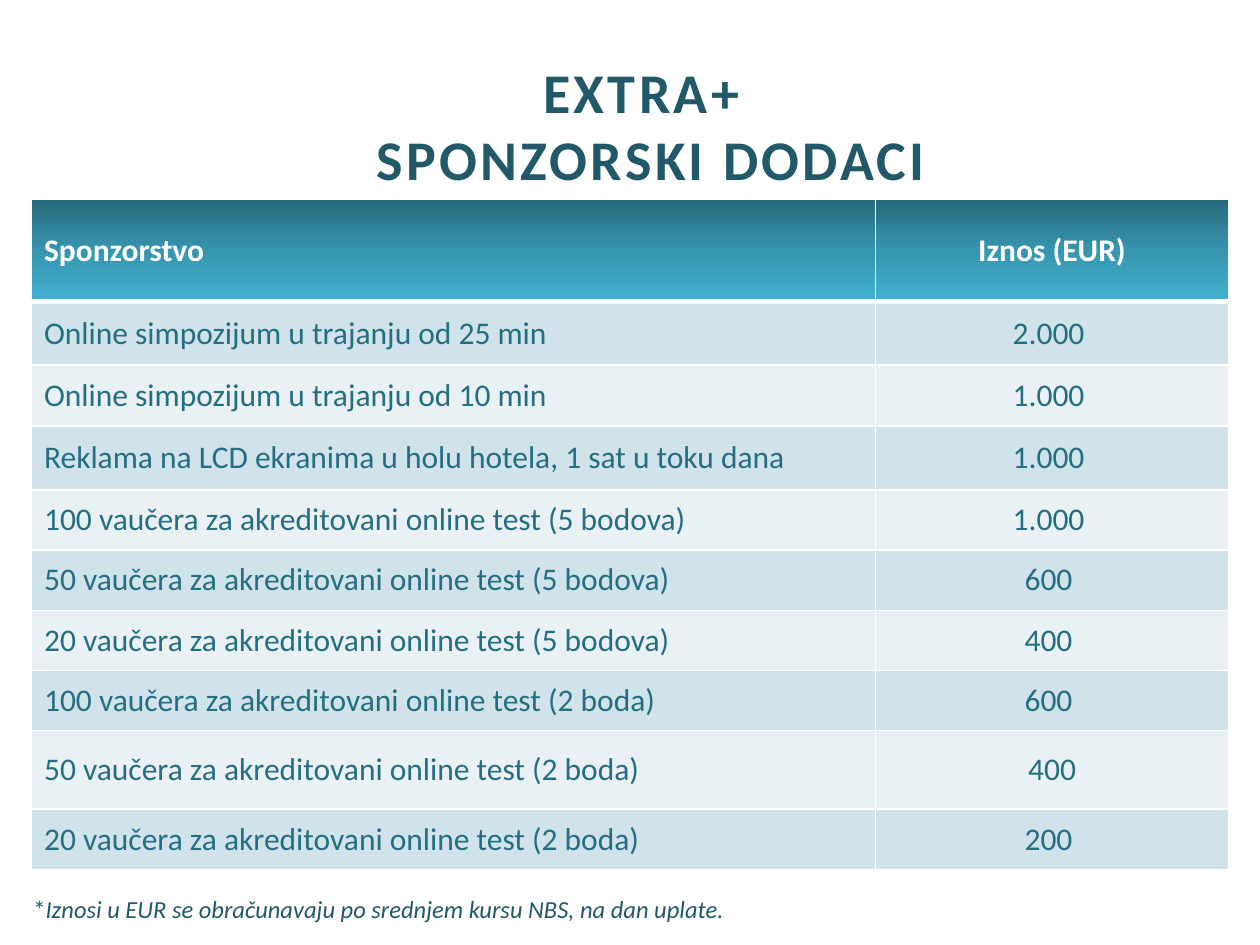
import copy
import pptx
import pptx.util
import pptx.dml.color
import pptx.enum.text
import pptx.oxml
from lxml import etree

Pt = pptx.util.Pt
ALIGN = pptx.enum.text.PP_ALIGN
ANCHOR = pptx.enum.text.MSO_ANCHOR
AUTO = pptx.enum.text.MSO_AUTO_SIZE
NS = 'xmlns:a="http://schemas.openxmlformats.org/drawingml/2006/main"'

FONT = "Calibri"
DARK, TEAL, WHITE = "215968", "256E82", "FFFFFF"
BANDS = ("D0E3EA", "E9F1F5")
HEADER_STOPS = ((0, "27697B"), (50, "3795AF"), (100, "42B1CF"))

COLUMNS = (482.4, 201.6)
ROW_HEIGHTS = (58.2, 36.5, 34.8, 36.5, 34.4, 34.4, 34.4, 34.4, 44.9, 34.4)
HEADINGS = ("Sponzorstvo", "Iznos (EUR)")
OFFERS = (
    ("Online simpozijum u trajanju od 25 min", "2.000 "),
    ("Online simpozijum u trajanju od 10 min", "1.000 "),
    ("Reklama na LCD ekranima u holu hotela, 1 sat u toku dana", "1.000 "),
    ("100 vaučera za akreditovani online test (5 bodova)", "1.000 "),
    ("50 vaučera za akreditovani online test (5 bodova)", "600 "),
    ("20 vaučera za akreditovani online test (5 bodova)", "400 "),
    ("100 vaučera za akreditovani online test (2 boda)", "600 "),
    ("50 vaučera za akreditovani online test (2 boda)", "400"),
    ("20 vaučera za akreditovani online test (2 boda)", "200 "),
)


def rgb(color):
    return pptx.dml.color.RGBColor.from_string(color)


def add_text(p, text, size=18, color=DARK, bold=False, italic=False,
             align=ALIGN.LEFT, tracking=None):
    """Add text to a paragraph; a newline becomes a line break."""
    p.alignment = align
    for i, line in enumerate(text.split("\n")):
        if i:
            p.add_line_break()
        r = p.add_run()
        r.text = line
        r.font.name, r.font.size = FONT, Pt(size)
        r.font.bold, r.font.italic = bold, italic
        r.font.color.rgb = rgb(color)
        if tracking:
            r._r.get_or_add_rPr().set("spc", str(round(tracking * 100)))
        if i:  # the break takes the format of the line after it
            r._r.getprevious().insert(0, copy.deepcopy(r._r.rPr))


def set_borders(cell, bottom=1):
    tcPr = cell._tc.get_or_add_tcPr()
    for side, width in (("L", 1), ("R", 1), ("T", 1), ("B", bottom)):
        tcPr.append(pptx.oxml.parse_xml(
            f'<a:ln{side} {NS} w="{Pt(width)}"><a:solidFill>'
            f'<a:srgbClr val="{WHITE}"/></a:solidFill></a:ln{side}>'))


def set_gradient(cell, stops):
    gs = "".join(f'<a:gs pos="{pos * 1000}"><a:srgbClr val="{color}"/></a:gs>'
                 for pos, color in stops)
    cell._tc.get_or_add_tcPr().append(pptx.oxml.parse_xml(
        f'<a:gradFill {NS} rotWithShape="1"><a:gsLst>{gs}</a:gsLst>'
        '<a:lin ang="5400000" scaled="0"/></a:gradFill>'))


def place_title(s, left, top, width, height):
    sp = s.shapes.title
    sp.left, sp.top, sp.width, sp.height = map(Pt, (left, top, width, height))
    tf = sp.text_frame
    tf.auto_size, tf.vertical_anchor = AUTO.NONE, ANCHOR.TOP
    tf.margin_left = tf.margin_right = tf.margin_bottom = 0
    tf.margin_top = Pt(2.8)
    add_text(tf.paragraphs[0], "EXTRA+ \nSPONZORSKI DODACI", size=32,
             bold=True, align=ALIGN.CENTER, tracking=1.9)


def place_price_table(s, left, top):
    rows = (HEADINGS,) + OFFERS
    table = s.shapes.add_table(
        len(rows), len(COLUMNS), Pt(left), Pt(top),
        Pt(sum(COLUMNS)), Pt(sum(ROW_HEIGHTS))).table
    for column, width in zip(table.columns, COLUMNS):
        column.width = Pt(width)
    for i, (row, height) in enumerate(zip(rows, ROW_HEIGHTS)):
        table.rows[i].height = Pt(height)
        header = i == 0
        for j, text in enumerate(row):
            cell = table.cell(i, j)
            cell.vertical_anchor = ANCHOR.MIDDLE
            set_borders(cell, bottom=3 if header else 1)
            if header:
                set_gradient(cell, HEADER_STOPS)
            else:
                cell.fill.solid()
                cell.fill.fore_color.rgb = rgb(BANDS[(i - 1) % 2])
            add_text(cell.text_frame.paragraphs[0], text, bold=header,
                     color=WHITE if header else TEAL,
                     align=ALIGN.CENTER if j else ALIGN.LEFT)


def place_footnote(s, left, top, width, height):
    tf = s.shapes.add_textbox(*map(Pt, (left, top, width, height))).text_frame
    tf.word_wrap, tf.auto_size = False, AUTO.SHAPE_TO_FIT_TEXT
    p = tf.paragraphs[0]
    add_text(p, "*", size=14)
    add_text(p, "Iznosi u EUR se obračunavaju po srednjem kursu NBS, "
                "na dan uplate.", size=14, italic=True)


def main():
    prs = pptx.Presentation()
    prs.slide_width, prs.slide_height = Pt(720), Pt(540)
    s = prs.slides.add_slide(prs.slide_layouts[5])
    s.background.fill.solid()
    s.background.fill.fore_color.rgb = rgb(WHITE)
    place_price_table(s, 18, 114)
    place_title(s, 132, 30, 480, 79)
    place_footnote(s, 12, 507.6, 426, 24.5)
    prs.save("out.pptx")


if __name__ == "__main__":
    main()
